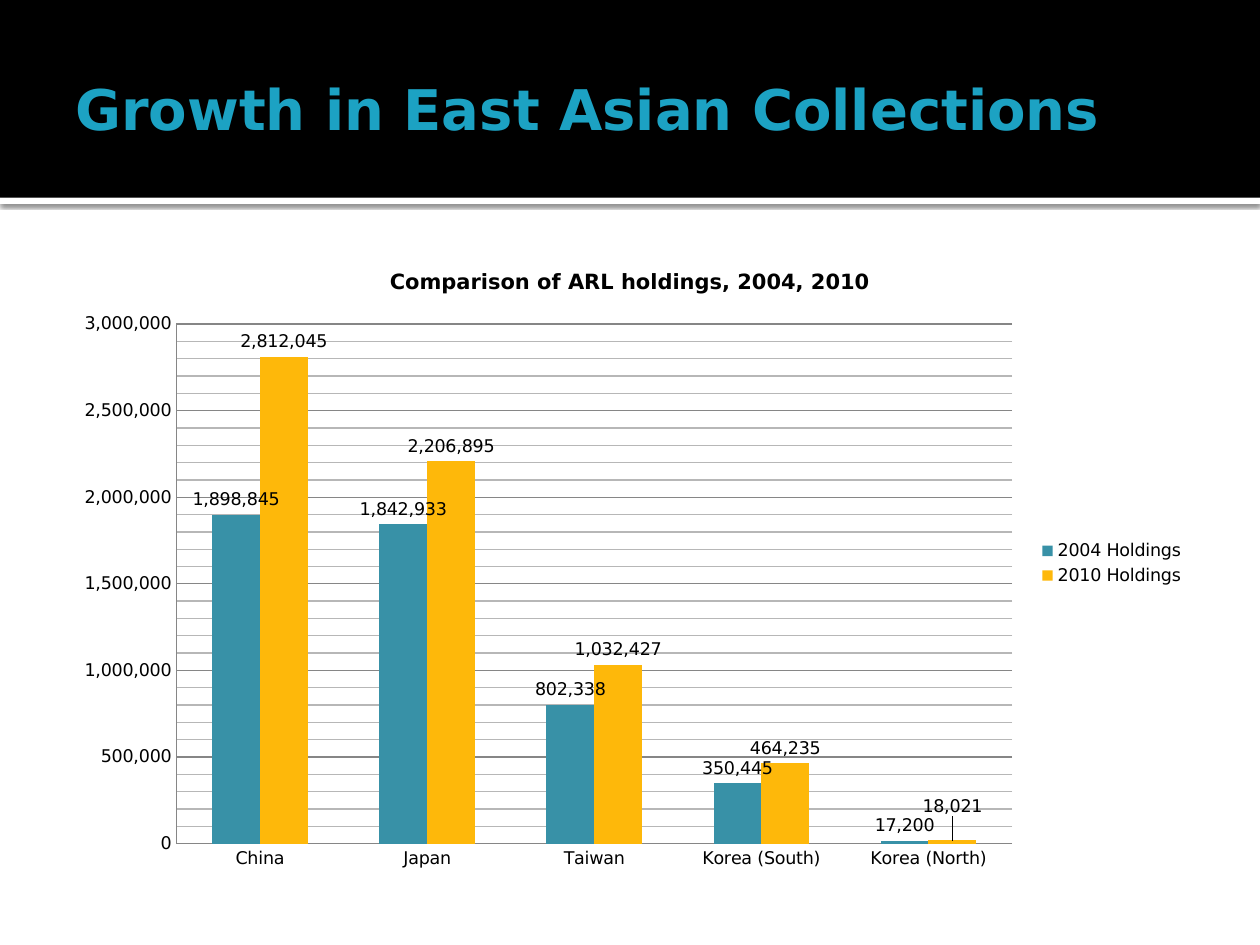
from lxml import etree
from pptx import Presentation
from pptx.chart.data import CategoryChartData
from pptx.dml.color import RGBColor
from pptx.enum.chart import XL_CHART_TYPE, XL_LABEL_POSITION, XL_LEGEND_POSITION, XL_TICK_MARK
from pptx.enum.shapes import MSO_SHAPE
from pptx.enum.text import MSO_ANCHOR
from pptx.oxml import parse_xml
from pptx.oxml.ns import nsdecls, qn
from pptx.util import Pt

COLUMNS = XL_CHART_TYPE.COLUMN_CLUSTERED
LABEL_ABOVE = XL_LABEL_POSITION.OUTSIDE_END
LEGEND_RIGHT = XL_LEGEND_POSITION.RIGHT
NO_TICK = XL_TICK_MARK.NONE
RECTANGLE = MSO_SHAPE.RECTANGLE
MIDDLE = MSO_ANCHOR.MIDDLE

BLACK = RGBColor(0x00, 0x00, 0x00)
WHITE = RGBColor(0xFF, 0xFF, 0xFF)
TITLE_BLUE = RGBColor(0x1C, 0xA2, 0xC3)
TEAL = RGBColor(0x38, 0x91, 0xA7)
AMBER = RGBColor(0xFE, 0xB8, 0x0A)
AXIS_GRAY = RGBColor(0x86, 0x86, 0x86)
MINOR_GRAY = RGBColor(0xB7, 0xB7, 0xB7)

FONT = "DejaVu Sans"
NUMBER_FORMAT = "#,##0"
COUNTRIES = ["China", "Japan", "Taiwan", "Korea (South)", "Korea (North)"]
HOLDINGS = [
    ("2004 Holdings", [1898845, 1842933, 802338, 350445, 17200], TEAL),
    ("2010 Holdings", [2812045, 2206895, 1032427, 464235, 18021], AMBER),
]


def format_font(font, size, color=BLACK, bold=False):
    font.name = FONT
    font.size = Pt(size)
    font.bold = bold
    font.color.rgb = color


def write_text(text_frame, text, **font_format):
    run = text_frame.paragraphs[0].add_run()
    run.text = text
    format_font(run.font, **font_format)


def add_band(slide, top, height, color):
    shape = slide.shapes.add_shape(RECTANGLE, 0, Pt(top), Pt(720), Pt(height))
    shape.shadow.inherit = False
    shape.fill.solid()
    shape.fill.fore_color.rgb = color
    shape.line.fill.background()
    return shape


def add_shadow(shape):
    effects = shape.element.spPr.find(qn("a:effectLst"))
    shadow = etree.SubElement(effects, qn("a:outerShdw"), blurRad=str(Pt(2.5)),
                              dist=str(Pt(0.8)), dir="5400000", rotWithShape="0")
    color = etree.SubElement(shadow, qn("a:srgbClr"), val=str(BLACK))
    etree.SubElement(color, qn("a:alpha"), val="60000")


def add_title(slide, text):
    text_box = slide.shapes.add_textbox(Pt(36), Pt(12.24), Pt(648), Pt(98.64))
    text_frame = text_box.text_frame
    text_frame.word_wrap = True
    text_frame.vertical_anchor = MIDDLE
    text_frame.margin_left = Pt(7.2)
    text_frame.margin_right = text_frame.margin_top = text_frame.margin_bottom = Pt(3.6)
    write_text(text_frame, text, size=32, color=TITLE_BLUE, bold=True)


def manual_layout(**values):
    children = "".join(f'<c:{name} val="{value}"/>' for name, value in values.items())
    return parse_xml(f'<c:layout {nsdecls("c")}><c:manualLayout>{children}'
                     '</c:manualLayout></c:layout>')


def place_plot(chart):
    plot_area = chart.element.find(".//" + qn("c:plotArea"))
    for layout in plot_area.findall(qn("c:layout")):
        plot_area.remove(layout)
    plot_area.insert(0, manual_layout(layoutTarget="inner", xMode="edge", yMode="edge",
                                      x=0.1, y=0.125, w=0.737, h=0.815))


def format_line(line, color):
    line.color.rgb = color
    line.width = Pt(0.75)


def format_minor_gridlines(chart):
    gridlines = chart.element.find(".//" + qn("c:minorGridlines"))
    gridlines.append(parse_xml(
        f'<c:spPr {nsdecls("c", "a")}><a:ln w="{Pt(0.75)}"><a:solidFill>'
        f'<a:srgbClr val="{MINOR_GRAY}"/></a:solidFill></a:ln></c:spPr>'))


def format_axes(chart):
    for axis in (chart.category_axis, chart.value_axis):
        axis.major_tick_mark = axis.minor_tick_mark = NO_TICK
        format_line(axis.format.line, AXIS_GRAY)
        format_font(axis.tick_labels.font, 10)
    axis = chart.value_axis
    axis.minimum_scale, axis.maximum_scale = 0, 3000000
    axis.major_unit, axis.minor_unit = 500000, 100000
    axis.has_major_gridlines = axis.has_minor_gridlines = True
    format_line(axis.major_gridlines.format.line, AXIS_GRAY)
    format_minor_gridlines(chart)
    axis.tick_labels.number_format = NUMBER_FORMAT
    axis.tick_labels.number_format_is_linked = False


def format_series(series, color):
    series.format.fill.solid()
    series.format.fill.fore_color.rgb = color
    labels = series.data_labels
    labels.show_value = True
    labels.number_format = NUMBER_FORMAT
    labels.number_format_is_linked = False
    labels.position = LABEL_ABOVE
    format_font(labels.font, 10)


def raise_label(chart, series, index, offset):
    label = series.points[index].data_label
    label.position = LABEL_ABOVE
    format_font(label.font, 10)
    label_index = chart.element.find(f'.//{qn("c:dLbl")}/{qn("c:idx")}')
    label_index.addnext(manual_layout(x=0, y=-offset))


def add_holdings_chart(slide):
    data = CategoryChartData(number_format=NUMBER_FORMAT)
    data.categories = COUNTRIES
    for name, values, _ in HOLDINGS:
        data.add_series(name, values)
    chart = slide.shapes.add_chart(COLUMNS, Pt(36), Pt(139.68), Pt(648), Pt(364.32), data).chart
    format_font(chart.font, 10)
    chart.has_title = True
    write_text(chart.chart_title.text_frame, "Comparison of ARL holdings, 2004, 2010",
               size=12, bold=True)
    chart.has_legend = True
    chart.legend.position = LEGEND_RIGHT
    chart.legend.include_in_layout = False
    format_font(chart.legend.font, 10)
    plot = chart.plots[0]
    plot.vary_by_categories = False
    plot.gap_width = 150
    plot.overlap = 0
    format_axes(chart)
    for series, (_, _, color) in zip(plot.series, HOLDINGS):
        format_series(series, color)
    raise_label(chart, plot.series[1], index=4, offset=0.03)
    place_plot(chart)


def main():
    presentation = Presentation()
    presentation.slide_width, presentation.slide_height = Pt(720), Pt(540)
    slide = presentation.slides.add_slide(presentation.slide_layouts[6])
    add_shadow(add_band(slide, top=113, height=3.6, color=WHITE))
    add_band(slide, top=0, height=113, color=BLACK)
    add_title(slide, "Growth in East Asian Collections")
    add_holdings_chart(slide)
    presentation.save("out.pptx")


if __name__ == "__main__":
    main()
